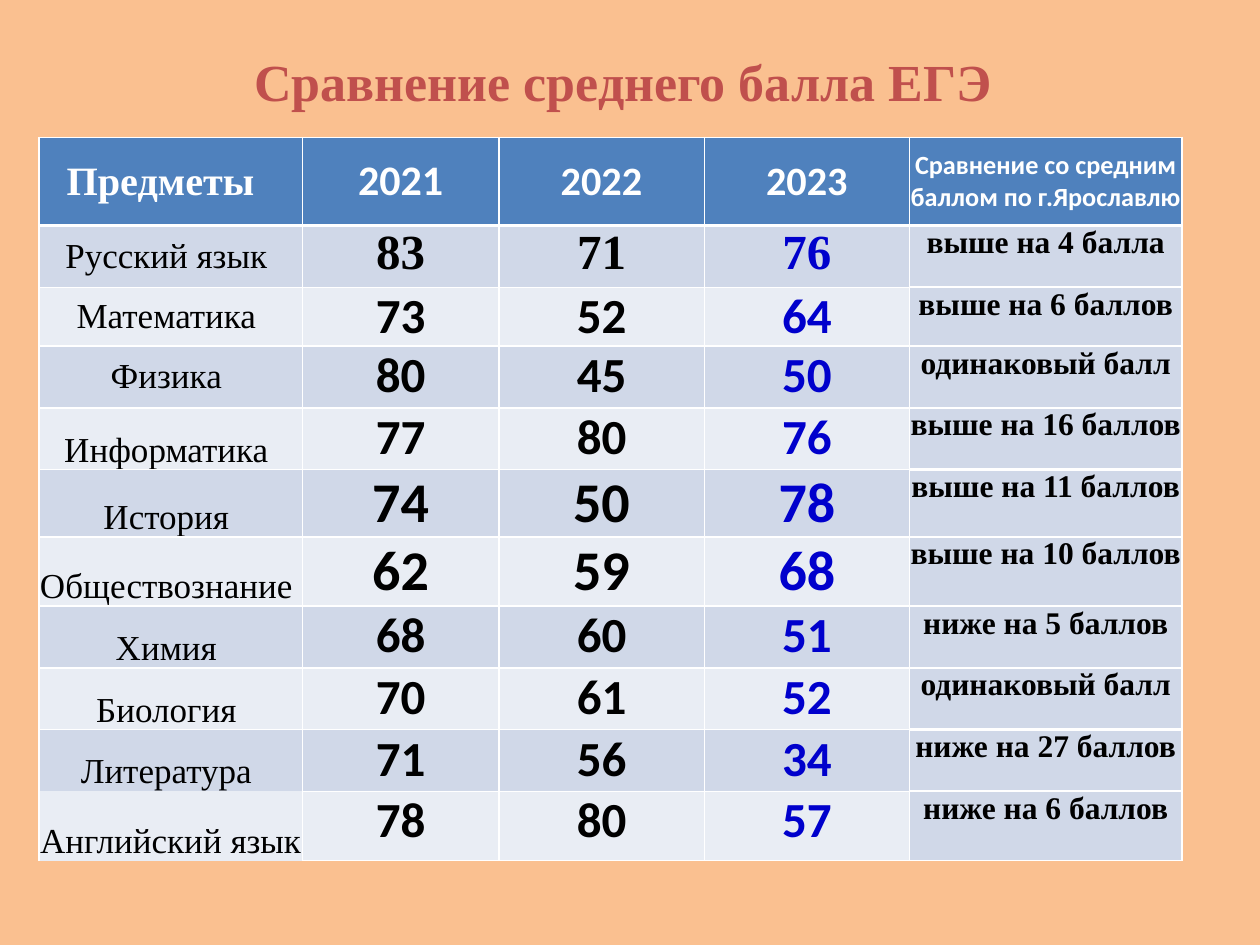
from lxml.etree import SubElement
from pptx import Presentation
from pptx.dml.color import RGBColor
from pptx.enum.text import MSO_ANCHOR, PP_ALIGN
from pptx.oxml.ns import qn
from pptx.util import Inches, Pt

PEACH = RGBColor(0xFA, 0xC0, 0x90)
BRICK = RGBColor(0xC0, 0x50, 0x4D)
HEADER_BLUE = RGBColor(0x4F, 0x81, 0xBD)
BAND_DARK = RGBColor(0xD0, 0xD8, 0xE8)
BAND_LIGHT = RGBColor(0xE9, 0xED, 0xF4)
WHITE = RGBColor(0xFF, 0xFF, 0xFF)
BLACK = RGBColor(0x00, 0x00, 0x00)
SCORE_BLUE = RGBColor(0x00, 0x00, 0xCC)
SERIF, SANS = "Times New Roman", "Calibri"

SLIDE_WIDTH, SLIDE_HEIGHT = Inches(10), Inches(7.5)
COLUMN_WIDTHS = [2.09, 1.56, 1.63, 1.63, 2.16]
ROW_HEIGHT = 0.49
SPECIAL_HEIGHTS = {0: 0.7, 2: 0.39, 6: 0.55, 10: 0.55}

# Header texts with their font and size
HEADERS = [
    ("Предметы  ", SERIF, 23),
    ("2021", SANS, 24),
    ("2022", SANS, 23),
    ("2023", SANS, 23),
    ("Сравнение со средним баллом по г.Ярославлю", SANS, 15),
]
# Subject, scores for 2021 to 2023, comparison with the city
RESULTS = [
    ("Русский язык ", 83, 71, 76, "выше на 4 балла"),
    ("Математика ", 73, 52, 64, "выше на 6 баллов"),
    ("Физика ", 80, 45, 50, "одинаковый балл"),
    ("Информатика ", 77, 80, 76, "выше на 16 баллов"),
    ("История ", 74, 50, 78, "выше на 11 баллов"),
    ("Обществознание ", 62, 59, 68, "выше на 10 баллов"),
    ("Химия ", 68, 60, 51, "ниже на 5 баллов"),
    ("Биология ", 70, 61, 52, "одинаковый балл"),
    ("Литература ", 71, 56, 34, "ниже на 27 баллов"),
    ("Английский язык", 78, 80, 57, "ниже на 6 баллов"),
]
LAST_ROW = len(RESULTS)
LAST_COLUMN = len(HEADERS) - 1
LARGE_SCORE_ROWS = (5, 6)
FIRST_BOTTOM_ROW = 4  # subjects sit at the cell bottom from here on


def write_text(frame, text, font=SERIF, size=20, color=BLACK, bold=True):
    """Fill a text frame with one centred paragraph."""
    para = frame.paragraphs[0]
    para.alignment = PP_ALIGN.CENTER
    span = para.add_run()
    span.text = text
    span.font.name = font
    span.font.size = Pt(size)
    span.font.bold = bold
    span.font.color.rgb = color


def set_borders(cell, **widths):
    """Draw white cell borders; a width of 0 hides the side."""
    properties = cell._tc.get_or_add_tcPr()
    for side in ("L", "R", "T", "B"):
        width = widths.get(side, 1)
        line = SubElement(properties, qn(f"a:ln{side}"), w=str(Pt(width)))
        if width:
            fill = SubElement(line, qn("a:solidFill"))
            SubElement(fill, qn("a:srgbClr"), val=str(WHITE))
        else:
            SubElement(line, qn("a:noFill"))


def style_cell(cell, fill, anchor, **borders):
    cell.margin_left = cell.margin_right = 0
    cell.margin_top = cell.margin_bottom = 0
    cell.vertical_anchor = anchor
    set_borders(cell, **borders)
    cell.fill.solid()
    cell.fill.fore_color.rgb = fill


def add_title(page, text):
    box = page.shapes.add_textbox(
        int(SLIDE_WIDTH * 0.05), int(SLIDE_HEIGHT * 0.04),
        int(SLIDE_WIDTH * 0.9), Inches(1.25))
    frame = box.text_frame
    frame.word_wrap = True
    frame.vertical_anchor = MSO_ANCHOR.TOP
    frame.margin_top = Inches(0.09)
    write_text(frame, text, size=29.7, color=BRICK)


def fill_header(table):
    for column, (text, font, size) in enumerate(HEADERS):
        cell = table.cell(0, column)
        style_cell(cell, HEADER_BLUE, MSO_ANCHOR.MIDDLE, B=1.5)
        write_text(cell.text_frame, text, font=font, size=size, color=WHITE)


def fill_result(table, row, subject, scores, comparison):
    band = BAND_DARK if row % 2 else BAND_LIGHT
    top = 1.5 if row == 1 else 1

    # Subject name; the last two rows share no line
    cell = table.cell(row, 0)
    anchor = MSO_ANCHOR.BOTTOM if row >= FIRST_BOTTOM_ROW else MSO_ANCHOR.MIDDLE
    style_cell(cell, band, anchor, T=0 if row == LAST_ROW else top,
               B=0 if row >= LAST_ROW - 1 else 1)
    write_text(cell.text_frame, subject, bold=False)

    # Scores, the latest year in blue
    for column, score in enumerate(scores, start=1):
        cell = table.cell(row, column)
        style_cell(cell, band, MSO_ANCHOR.TOP, T=top)
        write_text(cell.text_frame, str(score),
                   font=SERIF if row == 1 else SANS,
                   size=32 if row in LARGE_SCORE_ROWS else 28,
                   color=SCORE_BLUE if column == len(scores) else BLACK)

    # Comparison with the city average
    cell = table.cell(row, LAST_COLUMN)
    style_cell(cell, BAND_DARK, MSO_ANCHOR.TOP, T=1.5,
               B=1 if row == LAST_ROW else 1.5)
    write_text(cell.text_frame, comparison, size=18)


def add_results_table(page):
    heights = [SPECIAL_HEIGHTS.get(row, ROW_HEIGHT) for row in range(LAST_ROW + 1)]
    table = page.shapes.add_table(
        len(heights), len(COLUMN_WIDTHS), Inches(0.31), Inches(1.09),
        Inches(sum(COLUMN_WIDTHS)), Inches(sum(heights))).table
    for column, width in zip(table.columns, COLUMN_WIDTHS):
        column.width = Inches(width)
    for row, height in zip(table.rows, heights):
        row.height = Inches(height)
    fill_header(table)
    for row, (subject, *scores, comparison) in enumerate(RESULTS, start=1):
        fill_result(table, row, subject, scores, comparison)


def main():
    deck = Presentation()
    deck.slide_width, deck.slide_height = SLIDE_WIDTH, SLIDE_HEIGHT
    page = deck.slides.add_slide(deck.slide_layouts[6])
    page.background.fill.solid()
    page.background.fill.fore_color.rgb = PEACH
    add_title(page, "Сравнение среднего балла ЕГЭ ")
    add_results_table(page)
    deck.save("out.pptx")


if __name__ == "__main__":
    main()
